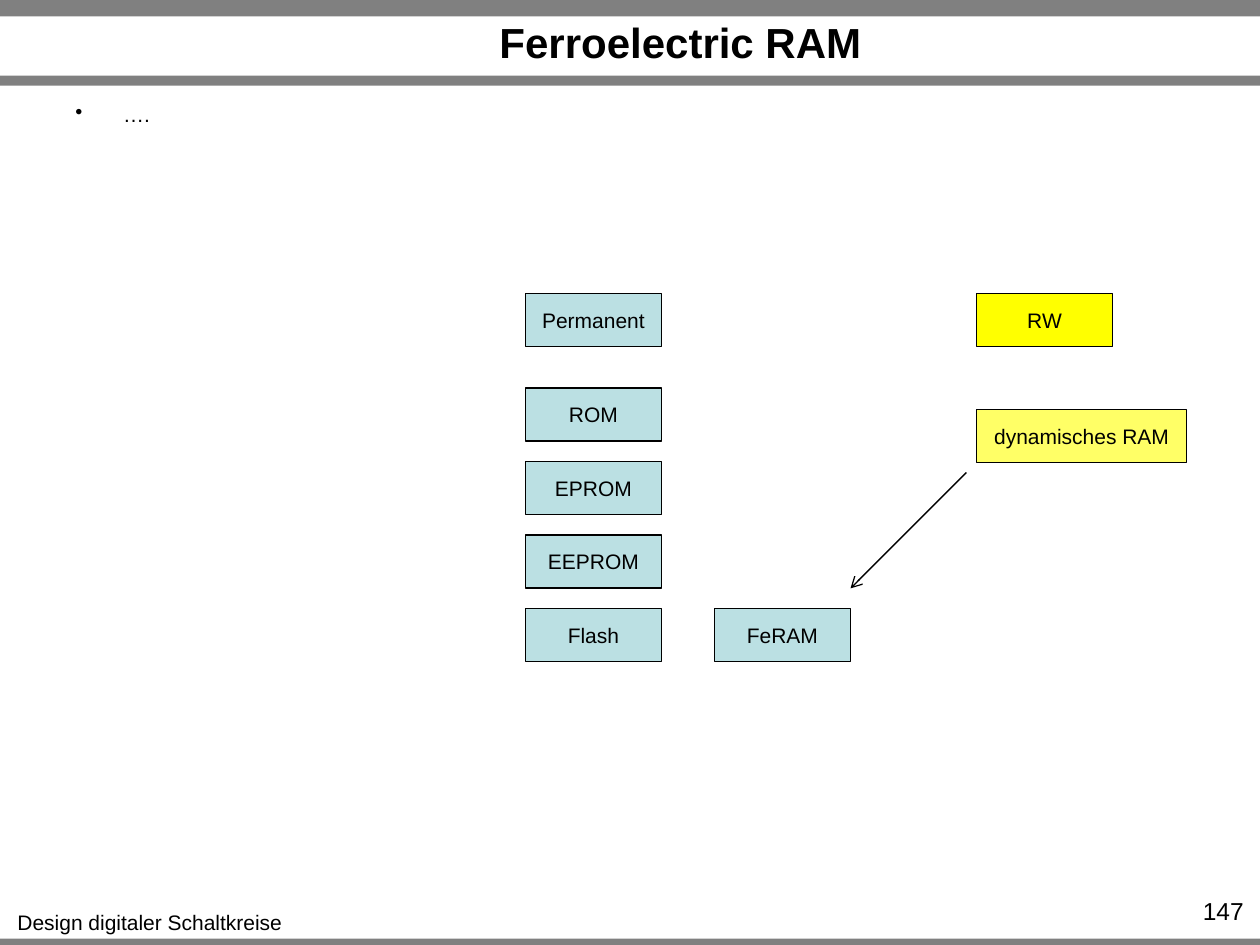
import pptx
import pptx.dml.color
import pptx.enum.shapes
import pptx.enum.text
import pptx.oxml
import pptx.oxml.ns
import pptx.util

Inches = pptx.util.Inches
Pt = pptx.util.Pt
RGBColor = pptx.dml.color.RGBColor
ALIGN = pptx.enum.text.PP_ALIGN
ANCHOR = pptx.enum.text.MSO_ANCHOR
RECTANGLE = pptx.enum.shapes.MSO_SHAPE.RECTANGLE
STRAIGHT = pptx.enum.shapes.MSO_CONNECTOR.STRAIGHT

BLACK = RGBColor(0x00, 0x00, 0x00)
GRAY = RGBColor(0x80, 0x80, 0x80)
LIGHT_BLUE = RGBColor(0xBB, 0xE0, 0xE3)
YELLOW = RGBColor(0xFF, 0xFF, 0x00)
PALE_YELLOW = RGBColor(0xFF, 0xFF, 0x66)

FONT = "Arial"
BOX_WIDTH, BOX_HEIGHT = 1.08, 0.42


def write(frame, text, size, align, bold=False):
    """Write one formatted run into the first paragraph of a frame."""
    paragraph = frame.paragraphs[0]
    paragraph.alignment = align
    run = paragraph.add_run()
    run.text = text
    run.font.name = FONT
    run.font.size = Pt(size)
    run.font.bold = bold
    run.font.color.rgb = BLACK
    return paragraph


def add_rectangle(slide, box, fill):
    """Add a flat rectangle without outline."""
    rectangle = slide.shapes.add_shape(RECTANGLE, *map(Inches, box))
    rectangle.shadow.inherit = False
    rectangle.fill.solid()
    rectangle.fill.fore_color.rgb = fill
    rectangle.line.fill.background()
    return rectangle


def add_text(slide, box, text, size, align, wrap=True):
    """Add a text box and return its paragraph."""
    frame = slide.shapes.add_textbox(*map(Inches, box)).text_frame
    frame.word_wrap = wrap
    return write(frame, text, size, align)


def add_frame(slide):
    """Add the gray bars, the footer and the page number."""
    for top, height in ((7.45, 0.08), (0, 0.13), (0.6, 0.08)):
        add_rectangle(slide, (0, top, 10, height), GRAY)
    add_text(slide, (0.03, 7.17, 2.32, 0.3), "Design digitaler Schaltkreise",
             12, ALIGN.CENTER, wrap=False)
    add_text(slide, (9.1, 7.06, 0.87, 0.24), "147", 14, ALIGN.RIGHT)


def add_title(slide, box, text):
    """Place and format the title placeholder."""
    title = slide.shapes.title
    title.left, title.top, title.width, title.height = map(Inches, box)
    frame = title.text_frame
    frame.auto_size = pptx.enum.text.MSO_AUTO_SIZE.NONE
    frame.vertical_anchor = ANCHOR.MIDDLE
    write(frame, text, 24, ALIGN.CENTER, bold=True)


def add_bullet(slide, box, text):
    """Add a bulleted line with a hanging indent."""
    paragraph = add_text(slide, box, text, 12, ALIGN.LEFT)
    properties = paragraph._p.get_or_add_pPr()
    properties.set("marL", str(Inches(0.38)))
    properties.set("indent", str(-Inches(0.38)))
    bullet = pptx.oxml.parse_xml(
        f'<a:buChar {pptx.oxml.ns.nsdecls("a")} char="•"/>')
    properties.append(bullet)


def add_memory(slide, left, top, label, fill, width=BOX_WIDTH):
    """Add an outlined box naming a kind of memory."""
    memory = add_rectangle(slide, (left, top, width, BOX_HEIGHT), fill)
    memory.line.color.rgb = BLACK
    memory.line.width = Pt(0.75)
    frame = memory.text_frame
    frame.word_wrap = False
    frame.vertical_anchor = ANCHOR.MIDDLE
    write(frame, label, 12, ALIGN.CENTER)


def add_arrow(slide, start, end):
    """Add a thin line with an open arrowhead at its end."""
    arrow = slide.shapes.add_connector(STRAIGHT, *map(Inches, start + end))
    arrow.line.color.rgb = BLACK
    arrow.line.width = Pt(0.75)
    namespace = pptx.oxml.ns.nsdecls("a")
    arrow.line._get_or_add_ln().append(
        pptx.oxml.parse_xml(f'<a:tailEnd {namespace} type="arrow"/>'))
    arrow._element.spPr.append(
        pptx.oxml.parse_xml(f"<a:effectLst {namespace}/>"))


def add_memory_map(slide, left, top):
    """Add the permanent and RW columns with FeRAM between them."""
    rw_left = left + 3.58
    add_memory(slide, left, top, "Permanent", LIGHT_BLUE)
    for row, label in enumerate(("ROM", "EPROM", "EEPROM", "Flash")):
        add_memory(slide, left, top + 0.75 + row * 1.75 / 3, label, LIGHT_BLUE)
    add_memory(slide, left + 1.5, top + 2.5, "FeRAM", LIGHT_BLUE)
    add_memory(slide, rw_left, top, "RW", YELLOW)
    add_memory(slide, rw_left, top + 0.92, "dynamisches RAM", PALE_YELLOW, 1.67)
    add_arrow(slide, (left + 3.5, top + 1.42), (left + 2.58, top + 2.34))


def main():
    """Build the slide and save it."""
    presentation = pptx.Presentation()
    presentation.slide_width = Inches(10)
    presentation.slide_height = Inches(7.5)
    slide = presentation.slides.add_slide(presentation.slide_layouts[5])
    add_frame(slide)
    add_title(slide, (1.3, 0.14, 8.2, 0.38), "Ferroelectric RAM")
    add_bullet(slide, (0.5, 0.76, 9, 0.66), "….")
    add_memory_map(slide, 4.17, 2.33)
    presentation.save("out.pptx")


if __name__ == "__main__":
    main()
